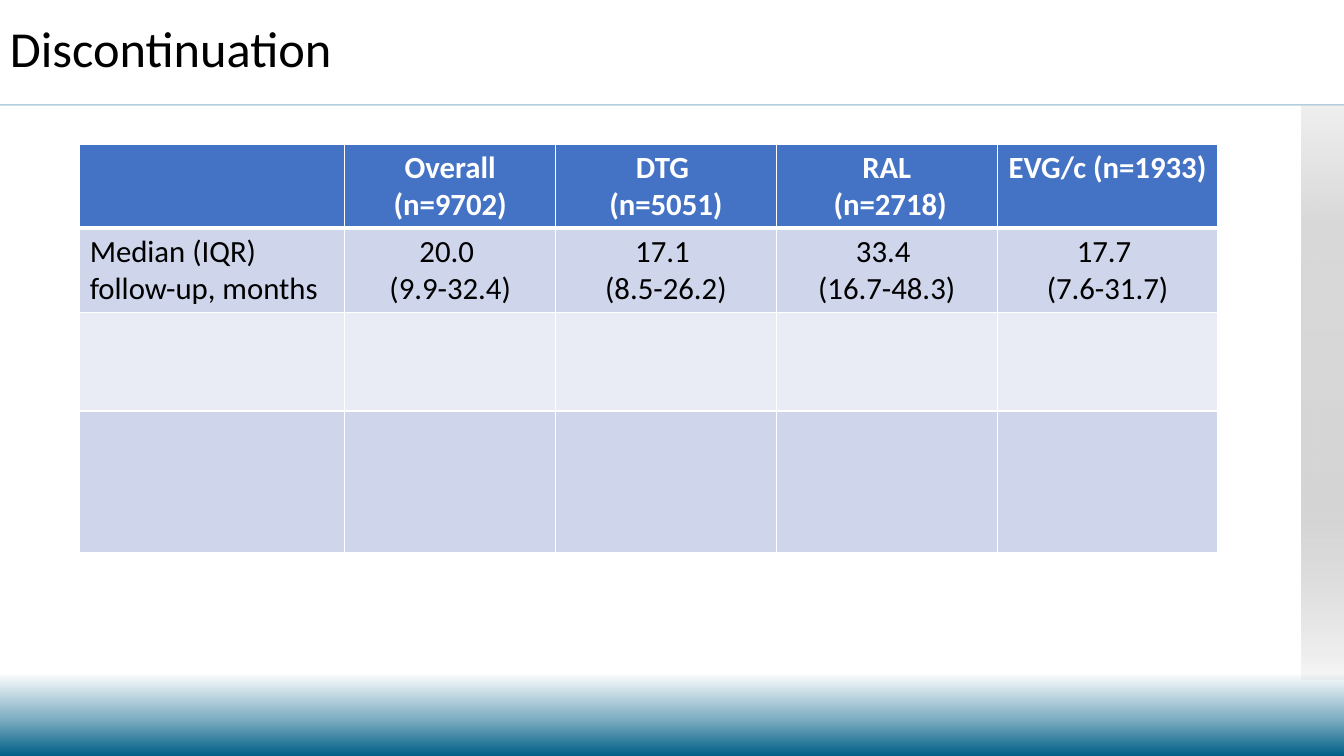
from lxml.etree import SubElement
from pptx import Presentation
from pptx.dml.color import RGBColor
from pptx.enum.shapes import MSO_CONNECTOR, MSO_SHAPE
from pptx.enum.text import MSO_ANCHOR, PP_ALIGN
from pptx.oxml import parse_xml
from pptx.oxml.ns import nsdecls, qn
from pptx.util import Pt

PX = 9144
SLIDE_W, SLIDE_H = 1333, 750
FONT = "Calibri"

WHITE = RGBColor(0xFF, 0xFF, 0xFF)
BLACK = RGBColor(0x00, 0x00, 0x00)
TEAL = RGBColor(0x00, 0x5F, 0x86)
PALE_TEAL = RGBColor(0x80, 0xAF, 0xC3)
LIGHT_GREY = RGBColor(0xD9, 0xD9, 0xD9)
MID_GREY = RGBColor(0xD5, 0xD5, 0xD5)
DARK_GREY = RGBColor(0xBF, 0xBF, 0xBF)
HEADER_BLUE = RGBColor(0x44, 0x72, 0xC4)
BAND_DARK = RGBColor(0xCF, 0xD5, 0xEA)
BAND_LIGHT = RGBColor(0xE9, 0xEB, 0xF5)

BACKGROUND_STOPS = [(89, WHITE, 100), (95, PALE_TEAL, 100), (100, TEAL, 100)]
SIDEBAR_STOPS = [(0, LIGHT_GREY, 40), (21, LIGHT_GREY, 100),
                 (70, MID_GREY, 100), (100, DARK_GREY, 13)]

COLUMN_WIDTHS = [263, 209, 219, 219, 219]
ROW_HEIGHTS = [83, 83, 98, 141]
ROW_FILLS = [HEADER_BLUE, BAND_DARK, BAND_LIGHT, BAND_DARK]
ROWS = [
    ["", "Overall (n=9702)", "DTG \n(n=5051)", "RAL\n (n=2718)", "EVG/c (n=1933)"],
    ["Median (IQR) follow-up, months", "20.0 \n(9.9-32.4)", "17.1 \n(8.5-26.2)",
     "33.4 \n(16.7-48.3)", "17.7 \n(7.6-31.7)"],
    [""] * 5,
    [""] * 5,
]


def box(*lengths):
    return [n * PX for n in lengths]


def write_text(tf, text, size=22, color=BLACK, bold=False,
               align=PP_ALIGN.LEFT, spacing=None):
    tf.word_wrap = True
    p = tf.paragraphs[0]
    p.text = text
    p.alignment = align
    p.line_spacing = spacing
    for r in p.runs:
        r.font.name = FONT
        r.font.size = Pt(size)
        r.font.bold = bold
        r.font.color.rgb = color


def set_alpha(color_element, percent):
    SubElement(color_element, qn("a:alpha"), val=str(percent * 1000))


def set_gradient(fill, owner, stops):
    fill.gradient()
    fill.gradient_angle = 270
    stop_list = next(owner.iter(qn("a:gsLst")))
    for old in list(stop_list):
        stop_list.remove(old)
    for position, color, opacity in stops:
        stop = SubElement(stop_list, qn("a:gs"), pos=str(position * 1000))
        set_alpha(SubElement(stop, qn("a:srgbClr"), val=str(color)), opacity)


def add_rule(slide, y):
    s = slide.shapes.add_connector(MSO_CONNECTOR.STRAIGHT, *box(0, y, SLIDE_W, y))
    s.line.color.rgb = TEAL
    s.line.width = Pt(1)
    set_alpha(next(s.line._ln.iter(qn("a:srgbClr"))), 30)
    SubElement(s._element.spPr, qn("a:effectLst"))


def add_sidebar(slide, *place):
    s = slide.shapes.add_shape(MSO_SHAPE.RECTANGLE, *box(*place))
    s.shadow.inherit = False
    s.line.fill.background()
    set_gradient(s.fill, s._element, SIDEBAR_STOPS)


def add_title(slide, text, *place):
    tf = slide.shapes.add_textbox(*box(*place)).text_frame
    tf.vertical_anchor = MSO_ANCHOR.MIDDLE
    write_text(tf, text, size=36, spacing=0.9)


def set_borders(cell, top, bottom):
    tc_pr = cell._tc.get_or_add_tcPr()
    widths = {"lnL": 1, "lnR": 1, "lnT": top, "lnB": bottom}
    for i, (tag, width) in enumerate(widths.items()):
        tc_pr.insert(i, parse_xml(
            f'<a:{tag} {nsdecls("a")} w="{Pt(width)}"><a:solidFill>'
            f'<a:srgbClr val="{WHITE}"/></a:solidFill></a:{tag}>'))


def add_results_table(slide, left, top):
    place = box(left, top, sum(COLUMN_WIDTHS), sum(ROW_HEIGHTS))
    table = slide.shapes.add_table(len(ROWS), len(COLUMN_WIDTHS), *place).table
    for column, width in zip(table.columns, COLUMN_WIDTHS):
        column.width = width * PX
    for i, texts in enumerate(ROWS):
        table.rows[i].height = ROW_HEIGHTS[i] * PX
        header = i == 0
        for j, text in enumerate(texts):
            cell = table.cell(i, j)
            cell.fill.solid()
            cell.fill.fore_color.rgb = ROW_FILLS[i]
            set_borders(cell, top=3 if i == 1 else 1, bottom=3 if header else 1)
            if text:
                write_text(cell.text_frame, text, bold=header,
                           color=WHITE if header else BLACK,
                           align=PP_ALIGN.CENTER if j else PP_ALIGN.LEFT)


def main():
    prs = Presentation()
    prs.slide_width, prs.slide_height = box(SLIDE_W, SLIDE_H)
    slide = prs.slides.add_slide(prs.slide_layouts[6])
    set_gradient(slide.background.fill, slide._element, BACKGROUND_STOPS)
    add_rule(slide, 104)
    add_sidebar(slide, 1291, 105, 42, 569)
    add_title(slide, "Discontinuation", 0, 6, 1150, 89)
    add_results_table(slide, 79, 143)
    prs.save("out.pptx")


if __name__ == "__main__":
    main()
